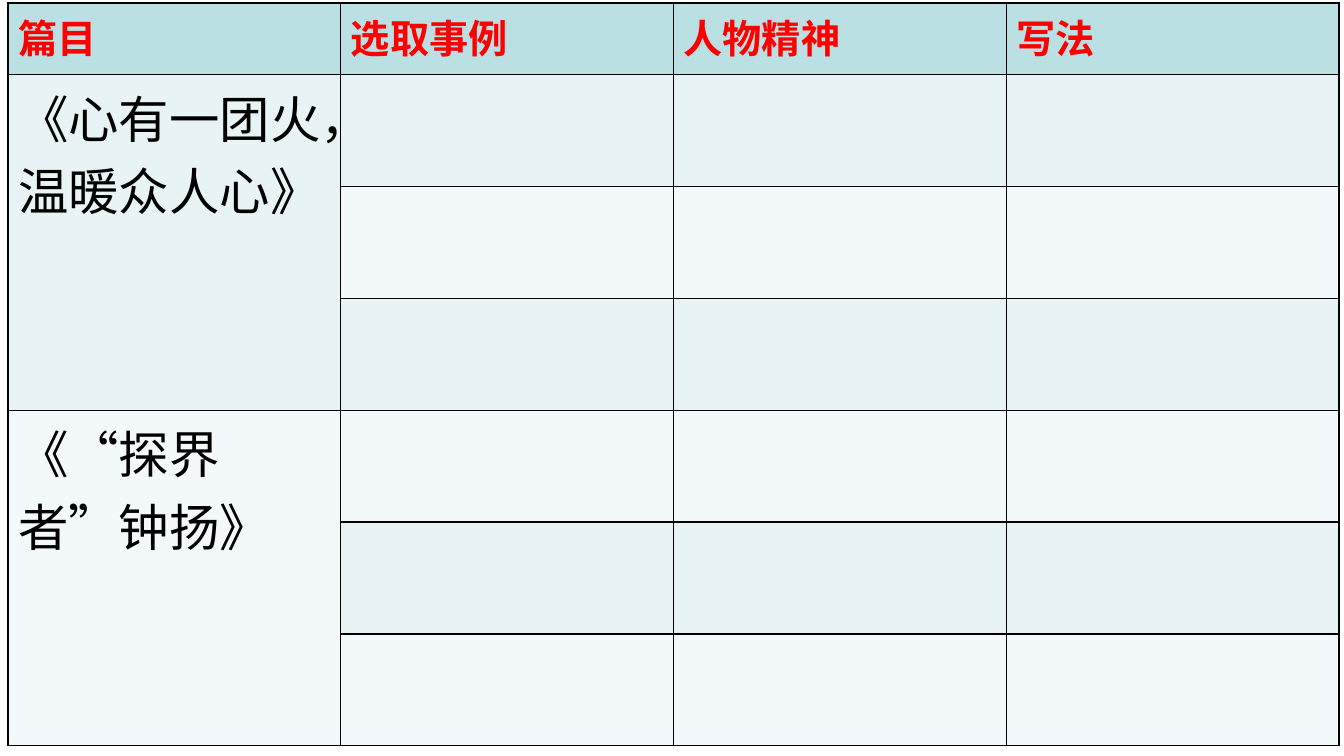
from dataclasses import dataclass

from lxml import etree
from pptx import Presentation, table as tables, util as u
from pptx.dml.color import RGBColor
from pptx.oxml import ns

HEADER_FILL = RGBColor(0xBB, 0xE0, 0xE3)
ODD_FILL = RGBColor(0xE7, 0xF3, 0xF4)
EVEN_FILL = RGBColor(0xF3, 0xF9, 0xFA)
RED = RGBColor(0xFF, 0x00, 0x00)
BLACK = RGBColor(0x00, 0x00, 0x00)

COLUMN_WIDTH = u.Inches(3.3)
HEADER_HEIGHT = u.Inches(0.71)
ROW_HEIGHT = u.Inches(1.11)
ROWS_PER_TEXT = 3
HEADINGS = ["篇目", "选取事例", "人物精神", "写法"]
TITLES = ["《心有一团火，温暖众人心》", "《“探界者”钟扬》"]


@dataclass(frozen=True)
class TextStyle:
    color: RGBColor
    format: dict


HEADING_STYLE = TextStyle(RED, {"name": "Arial", "size": u.Pt(28), "bold": True})
TITLE_STYLE = TextStyle(BLACK, {"name": "Arial", "size": u.Pt(36), "bold": False})


def fill_cell(cell: tables._Cell, color: RGBColor) -> None:
    properties = cell._tc.get_or_add_tcPr()
    for side in ("a:lnL", "a:lnR", "a:lnT", "a:lnB"):
        line = etree.SubElement(properties, ns.qn(side), w=str(u.Pt(1)))
        solid = etree.SubElement(line, ns.qn("a:solidFill"))
        etree.SubElement(solid, ns.qn("a:srgbClr"), val=str(BLACK))
    cell.fill.solid()
    cell.fill.fore_color.rgb = color


def write_cell(cell: tables._Cell, words: str, style: TextStyle) -> None:
    run = cell.text_frame.paragraphs[0].add_run()
    run.text = words
    for name, value in style.format.items():
        setattr(run.font, name, value)
    run.font.color.rgb = style.color


def row_fill(row: int) -> RGBColor:
    if row == 0:
        return HEADER_FILL
    return ODD_FILL if row % 2 else EVEN_FILL


def main() -> None:
    presentation = Presentation()
    presentation.slide_width = u.Inches(13.33)
    presentation.slide_height = u.Inches(7.5)
    slide = presentation.slides.add_slide(presentation.slide_layouts[6])

    row_count = 1 + ROWS_PER_TEXT * len(TITLES)
    table = slide.shapes.add_table(
        row_count, len(HEADINGS), u.Inches(0.08), u.Inches(0.03),
        COLUMN_WIDTH * len(HEADINGS),
        HEADER_HEIGHT + ROW_HEIGHT * (row_count - 1),
    ).table
    for column in table.columns:
        column.width = COLUMN_WIDTH
    for index, row in enumerate(table.rows):
        row.height = ROW_HEIGHT if index else HEADER_HEIGHT
        for cell in row.cells:
            fill_cell(cell, row_fill(index))

    for index, heading in enumerate(HEADINGS):
        write_cell(table.cell(0, index), heading, HEADING_STYLE)
    for index, title in enumerate(TITLES):
        first = 1 + index * ROWS_PER_TEXT
        title_cell = table.cell(first, 0)
        title_cell.merge(table.cell(first + ROWS_PER_TEXT - 1, 0))
        write_cell(title_cell, title, TITLE_STYLE)

    presentation.save("out.pptx")


if __name__ == "__main__":
    main()
